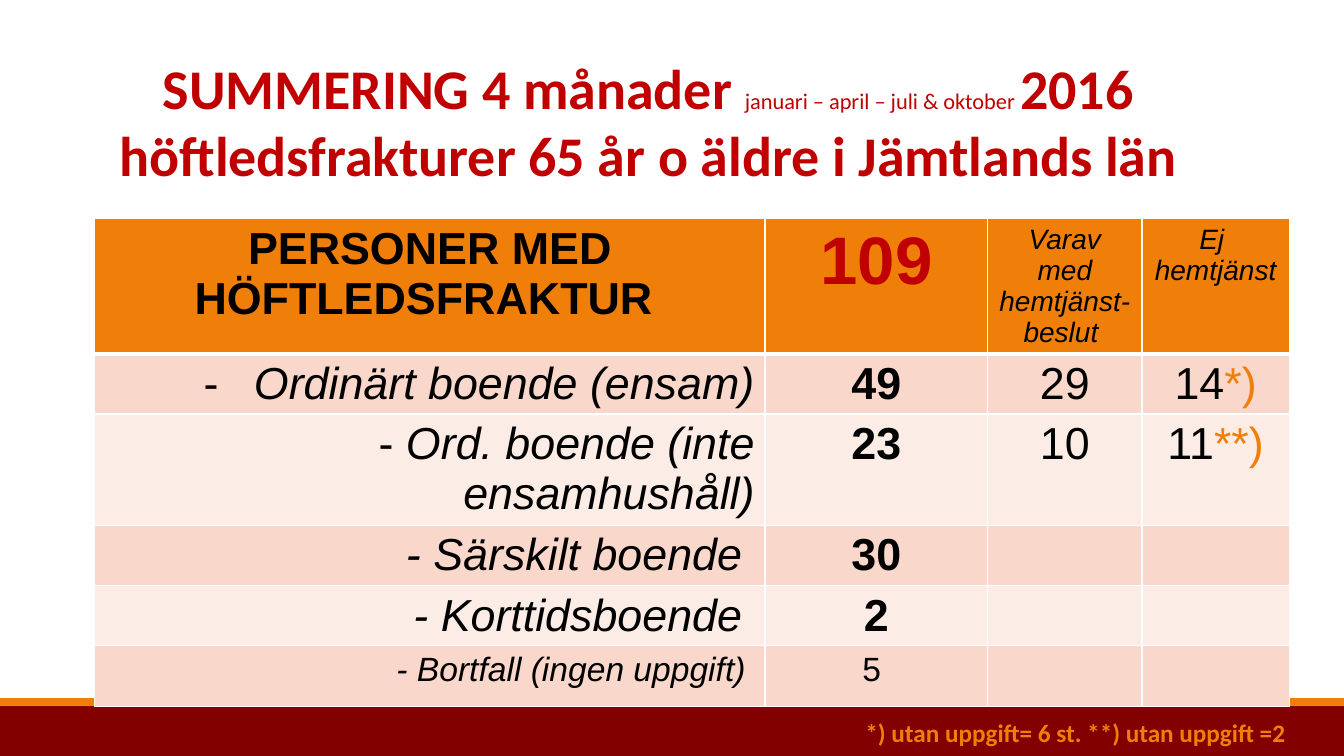
from lxml import etree
from pptx import Presentation
from pptx import util as u
from pptx.dml.color import RGBColor
from pptx.enum import shapes, text
from pptx.oxml import ns

COLORS = {
    "orange": "F07F09", "maroon": "820000", "red": "C00000", "black": "000000",
    "white": "FFFFFF", "band_dark": "F9D7CA", "band_light": "FCECE6",
}
LEFT, CENTER, RIGHT = (text.PP_ALIGN.LEFT, text.PP_ALIGN.CENTER, text.PP_ALIGN.RIGHT)
COLUMN_WIDTHS = [16.89, 5.61, 3.89, 3.71]
ROW_HEIGHTS = [3.39, 1.52, 2.8, 1.52, 1.52, 1.52]


def color(name):
    return RGBColor.from_string(COLORS[name])


def run(content, size=32, bold=False, italic=False, fill="black"):
    return content, size, bold, italic, fill


def write(text_frame, paragraphs, font, alignment):
    """Fill a text frame with paragraphs, each a list of run() tuples."""
    for index, runs in enumerate(paragraphs):
        paragraph = text_frame.paragraphs[0] if index == 0 else text_frame.add_paragraph()
        paragraph.alignment = alignment
        for content, size, bold, italic, fill in runs:
            piece = paragraph.add_run()
            piece.text = content
            piece.font.name = font
            piece.font.size = u.Pt(size)
            piece.font.bold = bold
            piece.font.italic = italic
            piece.font.color.rgb = color(fill)


def add_title(slide, left, top, width, height):
    title = slide.shapes.title
    title.left, title.top, title.width, title.height = map(u.Cm, (left, top, width, height))
    frame = title.text_frame
    frame.auto_size = text.MSO_AUTO_SIZE.NONE
    frame.vertical_anchor = text.MSO_ANCHOR.MIDDLE
    heading = {"size": 40, "bold": True, "fill": "red"}
    write(frame, [
        [run("SUMMERING 4 månader ", **heading),
         run("januari – april – juli & oktober ", 16, fill="red"),
         run("2016 ", **heading)],
        [run("höftledsfrakturer 65 år o äldre i Jämtlands län ", **heading)],
    ], "Calibri", CENTER)


def add_bar(slide, left, top, width, height, fill):
    bar = slide.shapes.add_shape(
        shapes.MSO_SHAPE.RECTANGLE, *map(u.Cm, (left, top, width, height)))
    bar.shadow.inherit = False
    bar.fill.solid()
    bar.fill.fore_color.rgb = color(fill)
    bar.line.fill.background()


def add_footer(slide, left, top, width, height):
    strip = 0.19
    add_bar(slide, left, top + strip, width, height - strip, "maroon")
    add_bar(slide, left, top, width, strip, "orange")


def add_footnote(slide, left, top, width, height):
    box = slide.shapes.add_textbox(*map(u.Cm, (left, top, width, height)))
    box.text_frame.word_wrap = True
    write(box.text_frame, [[run("*) utan uppgift= 6 st. **) utan uppgift =2",
                                18, bold=True, fill="orange")]], "Calibri", LEFT)


def set_borders(cell, row):
    """White borders, thicker between the header and the first row."""
    properties = cell._tc.get_or_add_tcPr()
    thick_side = {0: "lnB", 1: "lnT"}.get(row)
    for side in ("lnL", "lnR", "lnT", "lnB"):
        line = etree.SubElement(properties, ns.qn("a:" + side))
        line.set("w", str(u.Pt(3 if side == thick_side else 1)))
        fill = etree.SubElement(line, ns.qn("a:solidFill"))
        etree.SubElement(fill, ns.qn("a:srgbClr")).set("val", COLORS["white"])


def set_dash_bullet(paragraph):
    properties = paragraph._p.get_or_add_pPr()
    properties.set("marL", str(u.Cm(1.27)))
    properties.set("indent", str(u.Cm(-1.27)))
    bullet_color = etree.SubElement(properties, ns.qn("a:buClr"))
    etree.SubElement(bullet_color, ns.qn("a:srgbClr")).set("val", COLORS["black"])
    etree.SubElement(properties, ns.qn("a:buFont")).set("typeface", "Arial")
    etree.SubElement(properties, ns.qn("a:buChar")).set("char", "-")


def table_rows():
    """Return the rows as cells, each cell a list of paragraphs."""
    def label(content, size=32):
        return [[run(content, size, italic=True)]]

    def count(content):
        return [[run(content, bold=True)]]

    def note(*lines):
        return [[run(line, 20, italic=True)] for line in lines]

    def marked(content, mark):
        return [[run(content), run(mark, fill="orange")]]

    return [
        [count("PERSONER MED HÖFTLEDSFRAKTUR "), [[run("109", 48, bold=True, fill="red")]],
         note("Varav", "med hemtjänst-beslut "), note("Ej ", "hemtjänst ")],
        [label("Ordinärt boende (ensam)"), count("49"), [[run("29")]], marked("14", "*)")],
        [[[run("- "), run("Ord. boende (inte ensamhushåll)", italic=True)]],
         count("23"), [[run("10")]], marked("11", "**)")],
        [label("- Särskilt boende "), count("30"), [], []],
        [label("- Korttidsboende "), count("2"), [], []],
        [label("- Bortfall (ingen uppgift) ", 24), [[run("5 ", 24)]], [], []],
    ]


def add_fracture_table(slide, left, top):
    table = slide.shapes.add_table(
        len(ROW_HEIGHTS), len(COLUMN_WIDTHS), u.Cm(left), u.Cm(top),
        u.Cm(sum(COLUMN_WIDTHS)), u.Cm(sum(ROW_HEIGHTS))).table
    for column, width in zip(table.columns, COLUMN_WIDTHS):
        column.width = u.Cm(width)
    for row, height in zip(table.rows, ROW_HEIGHTS):
        row.height = u.Cm(height)
    for r, cells in enumerate(table_rows()):
        band = "orange" if r == 0 else "band_dark" if r % 2 else "band_light"
        for c, paragraphs in enumerate(cells):
            cell = table.cell(r, c)
            set_borders(cell, r)
            cell.fill.solid()
            cell.fill.fore_color.rgb = color(band)
            alignment = RIGHT if c == 0 and r > 0 else CENTER
            write(cell.text_frame, paragraphs, "Arial", alignment)
    set_dash_bullet(table.cell(1, 0).text_frame.paragraphs[0])


def main():
    presentation = Presentation()
    presentation.slide_width, presentation.slide_height = u.Cm(33.87), u.Cm(19.05)
    slide = presentation.slides.add_slide(presentation.slide_layouts[5])
    add_footer(slide, 0, 17.59, 33.87, 1.46)
    add_title(slide, 0.53, 1.19, 31.93, 3.68)
    add_fracture_table(slide, 2.39, 5.51)
    add_footnote(slide, 21.56, 17.96, 11.25, 1.02)
    presentation.save("out.pptx")


if __name__ == "__main__":
    main()
